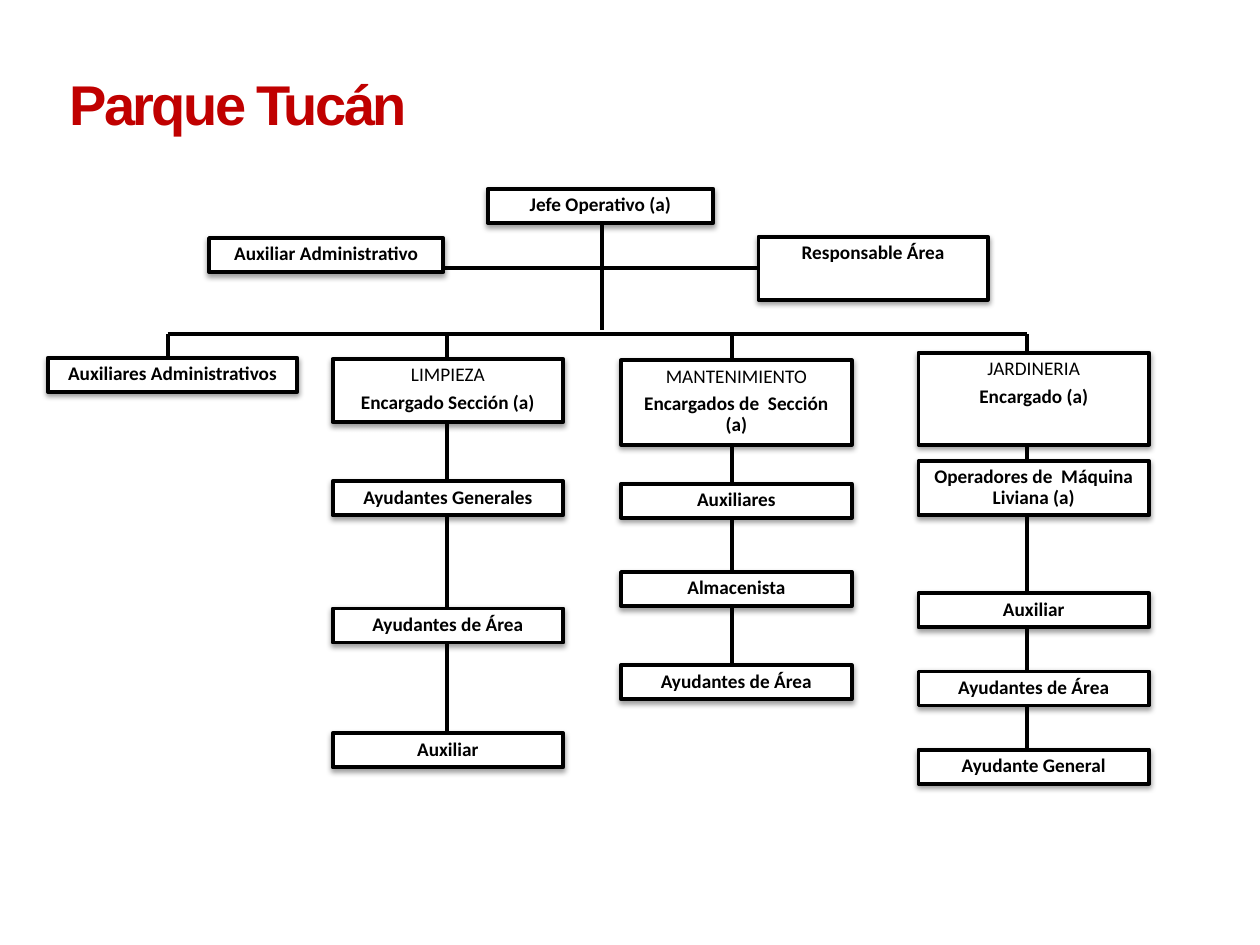
from lxml.etree import SubElement
from pptx import Presentation
from pptx.dml.color import RGBColor
from pptx.enum.shapes import MSO_CONNECTOR, MSO_SHAPE
from pptx.enum.text import MSO_ANCHOR, MSO_AUTO_SIZE, PP_ALIGN
from pptx.oxml.ns import qn
from pptx.util import Inches, Pt

COLORS = {"title": "C00000", "ink": "000000", "box": "FFFFFF"}

# Grid of 100 columns by 75 rows
CELL = Inches(0.1)
COLUMNS, ROWS = 100, 75
BOX_WIDTH, BOX_HEIGHT = 18.3, 2.7
BUS_ROW = 26.5

# Top of the chart: left, top, width, height, role
MANAGEMENT = [
    (38.7, 15, 17.9, BOX_HEIGHT, "Jefe Operativo (a)"),
    (16.6, 18.9, 18.6, BOX_HEIGHT, "Auxiliar Administrativo"),
    (60.2, 18.8, 18.2, 5, "Responsable Área"),
    (3.8, 28.4, 19.8, BOX_HEIGHT, "Auxiliares Administrativos"),
]

# Areas: left, trunk column, (area, lead, top, height), [(role, top, height)]
AREAS = [
    (26.4, 35.5, ("LIMPIEZA", "Encargado Sección (a)", 28.5, 5), [
        ("Ayudantes Generales", 38.2, BOX_HEIGHT),
        ("Ayudantes de Área", 48.3, BOX_HEIGHT),
        ("Auxiliar", 58.2, BOX_HEIGHT)]),
    (49.3, 58.1, ("MANTENIMIENTO", "Encargados de  Sección (a)", 28.6, 6.7), [
        ("Auxiliares", 38.4, BOX_HEIGHT),
        ("Almacenista", 45.4, BOX_HEIGHT),
        ("Ayudantes de Área", 52.8, BOX_HEIGHT)]),
    (72.9, 81.5, ("JARDINERIA", "Encargado (a)", 28, 7.3), [
        ("Operadores de  Máquina Liviana (a)", 36.6, 4.3),
        ("Auxiliar", 47.1, BOX_HEIGHT),
        ("Ayudantes de Área", 53.3, BOX_HEIGHT),
        ("Ayudante General", 59.5, BOX_HEIGHT)]),
]


def cells(*counts):
    return [int(count * CELL) for count in counts]


def color(name):
    return RGBColor.from_string(COLORS[name])


def add_title(slide, text):
    title = slide.shapes.title
    title.left, title.top, title.width, title.height = cells(4.5, 5, 35.4, 6.4)
    frame = title.text_frame
    frame.text = text
    frame.word_wrap = False
    frame.auto_size = MSO_AUTO_SIZE.NONE
    frame.vertical_anchor = MSO_ANCHOR.TOP
    paragraph = frame.paragraphs[0]
    paragraph.alignment = PP_ALIGN.LEFT
    font = paragraph.font
    font.name, font.size, font.bold = "Arial", Pt(32), True
    font.color.rgb = color("title")
    # Tight letter spacing
    paragraph.runs[0].font._element.set("spc", "-150")


def add_line(slide, x1, y1, x2, y2):
    link = slide.shapes.add_connector(
        MSO_CONNECTOR.STRAIGHT, *cells(x1, y1, x2, y2))
    link.line.color.rgb = color("ink")
    link.line.width = Pt(2.25)
    SubElement(link._element.spPr, qn("a:effectLst"))


def add_soft_shadow(box):
    box.shadow.inherit = False
    effects = box._element.spPr.find(qn("a:effectLst"))
    shadow = SubElement(effects, qn("a:outerShdw"), blurRad=str(Pt(3.1)),
                        dist=str(Pt(1.6)), dir="5400000", rotWithShape="0")
    tint = SubElement(shadow, qn("a:srgbClr"), val=COLORS["ink"])
    SubElement(tint, qn("a:alpha"), val="38000")


def add_box(slide, left, top, width, height, role, area=None):
    box = slide.shapes.add_shape(
        MSO_SHAPE.RECTANGLE, *cells(left, top, width, height))
    box.fill.solid()
    box.fill.fore_color.rgb = color("box")
    box.line.color.rgb = color("ink")
    box.line.width = Pt(2.25)
    add_soft_shadow(box)
    frame = box.text_frame
    frame.word_wrap = True
    frame.vertical_anchor = MSO_ANCHOR.TOP
    frame.text = f"{area}\n{role}" if area else role
    for paragraph in frame.paragraphs:
        paragraph.alignment = PP_ALIGN.CENTER
        paragraph.line_spacing = 0.9
        paragraph.space_after = Pt(4)
        font = paragraph.font
        font.name, font.size = "Calibri", Pt(11)
        font.bold = paragraph.text != area
        font.color.rgb = color("ink")


def add_links(slide):
    # Head of the chart, its two assistants and the bus over the areas
    add_line(slide, 47.8, 17.7, 47.8, 26.2)
    add_line(slide, 35.2, 21.3, 60.2, 21.3)
    add_line(slide, 13.3, BUS_ROW, 81.5, BUS_ROW)
    add_line(slide, 13.3, BUS_ROW, 13.3, 30)
    # One trunk per area, down to its last role
    for _, trunk, _, roles in AREAS:
        add_line(slide, trunk, BUS_ROW, trunk, roles[-1][1] + 1)


def add_area(slide, left, lead_box, roles):
    area, lead, top, height = lead_box
    add_box(slide, left, top, BOX_WIDTH, height, lead, area)
    for role, role_top, role_height in roles:
        add_box(slide, left, role_top, BOX_WIDTH, role_height, role)


def main():
    deck = Presentation()
    deck.slide_width, deck.slide_height = cells(COLUMNS, ROWS)
    slide = deck.slides.add_slide(deck.slide_layouts[5])
    add_title(slide, "Parque Tucán")
    add_links(slide)
    for position in MANAGEMENT:
        add_box(slide, *position)
    for left, _, lead_box, roles in AREAS:
        add_area(slide, left, lead_box, roles)
    deck.save("out.pptx")


if __name__ == "__main__":
    main()
